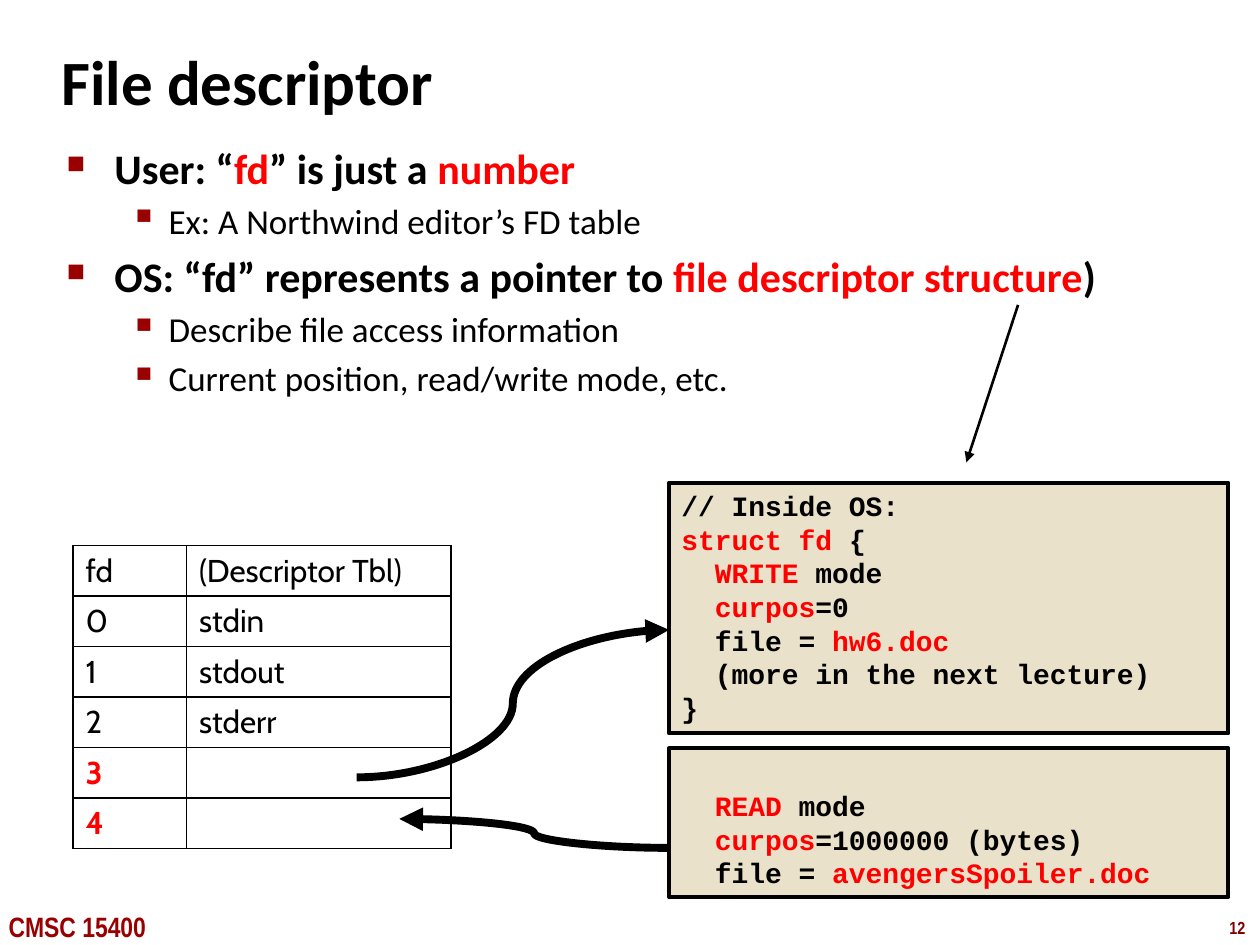
from lxml.etree import SubElement
from pptx import Presentation
from pptx.dml.color import RGBColor
from pptx.enum.shapes import MSO_CONNECTOR, MSO_SHAPE
from pptx.enum.text import MSO_ANCHOR, PP_ALIGN
from pptx.oxml.ns import qn
from pptx.util import Pt

EMU_PER_PX = 9144  # 100 px to the inch
BLACK, RED, MAROON, DARK_RED, SAND = "000000", "FF0000", "990000", "800000", "E9E1C9"
# level: (bullet, bullet size %, left margin, hanging indent, text size, bold, space before)
BULLETS = {0: ("■", 60, 38, 38, 24, True, 5), 1: ("▪", 110, 81, 31, 20, False, 4)}


def px(length):
    return length * EMU_PER_PX


def color(value):
    return RGBColor.from_string(value)


def add_solid_fill(parent, value):
    fill = SubElement(parent, qn("a:solidFill"))
    SubElement(fill, qn("a:srgbClr"), val=value)


class SlideBuilder:
    body_font, label_font, code_font, table_font = "Calibri", "Arial Narrow", "Courier New", "Cabin"

    def __init__(self, slide):
        self.shapes = slide.shapes

    def add_spans(self, para, text, font, size, bold=True, base=BLACK):
        """Fill a paragraph; the parts between | marks alternate base colour and red."""
        for index, part in enumerate(text.split("|")):
            if part:
                span = para.add_run()
                span.text = part
                span.font.name, span.font.size, span.font.bold = font, Pt(size), bold
                span.font.color.rgb = color(RED if index % 2 else base)

    def text(self, place, text, font, size, base=BLACK, wrap=False, anchor=MSO_ANCHOR.TOP):
        frame = self.shapes.add_textbox(*map(px, place)).text_frame
        frame.word_wrap, frame.vertical_anchor = wrap, anchor
        self.add_spans(frame.paragraphs[0], text, font, size, base=base)

    def bullets(self, place, items):
        frame = self.shapes.add_textbox(*map(px, place)).text_frame
        frame.word_wrap = True
        for index, (level, text) in enumerate(items):
            mark, mark_size, margin, hanging, size, bold, before = BULLETS[level]
            para = frame.add_paragraph() if index else frame.paragraphs[0]
            para.level = level
            if index:
                para.space_before = Pt(before)
            props = para._p.get_or_add_pPr()
            props.set("marL", str(px(margin)))
            props.set("indent", str(-px(hanging)))
            SubElement(SubElement(props, qn("a:buClr")), qn("a:srgbClr"), val=MAROON)
            SubElement(props, qn("a:buSzPct"), val=str(mark_size * 1000))
            SubElement(props, qn("a:buChar"), char=mark)
            self.add_spans(para, text, self.body_font, size, bold)

    def code(self, place, lines, top_inset=5):
        box = self.shapes.add_shape(MSO_SHAPE.RECTANGLE, *map(px, place))
        box.shadow.inherit = False
        box.fill.solid()
        box.fill.fore_color.rgb = color(SAND)
        box.line.color.rgb = color(BLACK)
        box.line.width = Pt(2.25)
        frame = box.text_frame
        frame.word_wrap, frame.vertical_anchor = True, MSO_ANCHOR.TOP
        frame.margin_top = px(top_inset)
        for index, line in enumerate(lines):
            para = frame.add_paragraph() if index else frame.paragraphs[0]
            para.alignment = PP_ALIGN.LEFT
            self.add_spans(para, line, self.code_font, 16)

    def table(self, place, widths, rows):
        table = self.shapes.add_table(len(rows), len(widths), *map(px, place)).table
        for column, width in zip(table.columns, widths):
            column.width = px(width)
        for row_index, row in enumerate(rows):
            for column_index, text in enumerate(row):
                cell = table.cell(row_index, column_index)
                para = cell.text_frame.paragraphs[0]
                para.font.size = Pt(18)
                self.add_spans(para, text, self.table_font, 18, bold="|" in text)
                props = cell._tc.get_or_add_tcPr()
                for side in ("lnL", "lnR", "lnT", "lnB"):
                    add_solid_fill(SubElement(props, qn(f"a:{side}"), w=str(Pt(1))), BLACK)
                cell.fill.background()

    def arrow(self, kind, start, end, width):
        connector = self.shapes.add_connector(kind, *map(px, start + end))
        connector.line.color.rgb = color(BLACK)
        connector.line.width = Pt(width)
        props = connector._element.spPr
        SubElement(props.find(qn("a:ln")), qn("a:tailEnd"), type="triangle")
        SubElement(props, qn("a:effectLst"))


def main():
    deck = Presentation()
    deck.slide_width, deck.slide_height = px(1000), px(750)
    page = SlideBuilder(deck.slides.add_slide(deck.slide_layouts[6]))

    page.text((966, 723, 34, 27), "12", page.label_font, 10, DARK_RED)
    page.text((-3, 717, 142, 37), "CMSC 15400", page.label_font, 16, MAROON)
    page.text((39, 33, 830, 61), "File descriptor", page.body_font, 36,
              wrap=True, anchor=MSO_ANCHOR.MIDDLE)
    page.bullets((43, 108, 948, 292), [
        (0, "User: “|fd|” is just a |number"),
        (1, "Ex: A Northwind editor’s FD table"),
        (0, "OS: “fd” represents a pointer to |file descriptor structure|)"),
        (1, "Describe file access information"),
        (1, "Current position, read/write mode, etc."),
    ])
    page.code((531, 383, 444, 199), [
        "// Inside OS:",
        "|struct fd |{",
        "  |WRITE| mode",
        "|  curpos|=0",
        "  file = |hw6.doc",
        "  (more in the next lecture)",
        "}",
    ])
    page.table((58, 433, 300, 240), (90, 210), [
        ("fd", "(Descriptor Tbl)"),
        ("0", "stdin"),
        ("1", "stdout"),
        ("2", "stderr"),
        ("|3", ""),
        ("|4", ""),
    ])
    page.arrow(MSO_CONNECTOR.CURVE, (283, 617), (531, 500), 4.5)
    page.code((531, 594, 444, 118), [
        "  |READ| mode",
        "|  curpos|=1000000 (bytes)",
        "  file = |avengersSpoiler.doc",
    ], top_inset=32)
    page.arrow(MSO_CONNECTOR.CURVE, (531, 673), (317, 650), 4.5)
    page.arrow(MSO_CONNECTOR.STRAIGHT, (808, 242), (767, 367), 1.5)
    deck.save("out.pptx")


if __name__ == "__main__":
    main()
